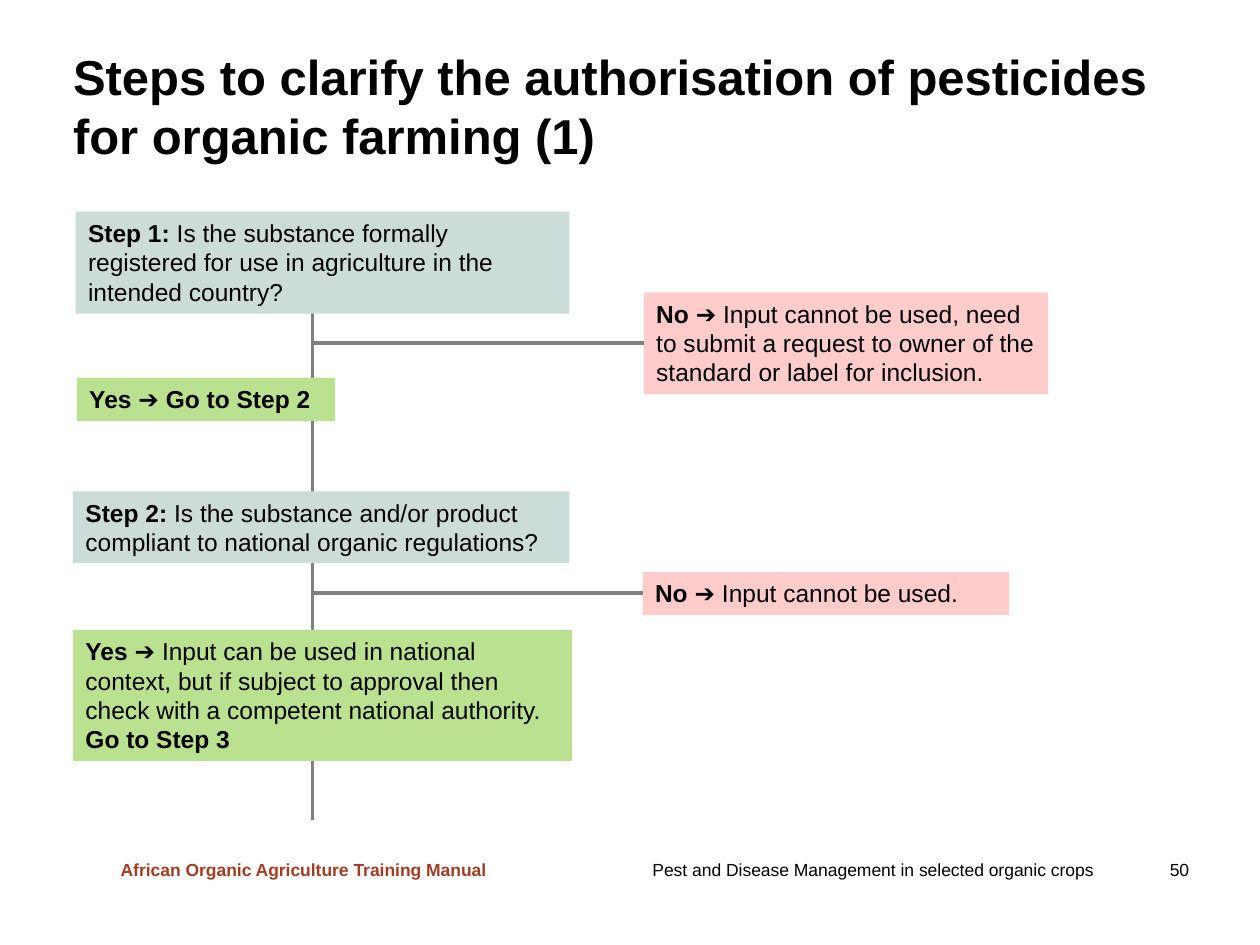
"""Build the slide on the first steps to clarify pesticide authorisation."""

from dataclasses import dataclass

from lxml import etree
from pptx import Presentation
from pptx.dml.color import RGBColor
from pptx.enum.shapes import MSO_CONNECTOR, MSO_SHAPE
from pptx.enum.text import MSO_ANCHOR, PP_ALIGN
from pptx.oxml.ns import qn
from pptx.util import Inches, Pt

STRAIGHT = MSO_CONNECTOR.STRAIGHT
RECTANGLE = MSO_SHAPE.RECTANGLE
TOP, MIDDLE = MSO_ANCHOR.TOP, MSO_ANCHOR.MIDDLE
LEFT = PP_ALIGN.LEFT
LEFT_SIDE = 1

COLUMNS, ROWS = 100, 75
SLIDE_WIDTH, SLIDE_HEIGHT = Inches(10), Inches(7.5)
FONT = "Arial"
COLOURS = {
    "text": "000000",
    "manual": "A23D25",
    "line": "808080",
    "step": "CCDCD9",
    "yes": "BAE18F",
    "no": "FFCCCC",
}
SPINE_COLUMN, SPINE_TOP, SPINE_BOTTOM = 24.8, 21.8, 65.1
DEFAULT_INSETS = (1, 0.5, 1, 0.5)


@dataclass(frozen=True)
class Area:
    """A rectangle in grid columns and rows."""

    column: float
    row: float
    columns: float
    rows: float


@dataclass(frozen=True)
class Card:
    """A filled box whose paragraphs are lists of (text, bold) spans."""

    kind: str
    area: Area
    paras: list


CARDS = [
    Card("no", Area(51.1, 23.2, 32.1, 8.1), [[
        ("No ", True),
        ("➔ Input cannot be used, need to submit a request to owner of the "
         "standard or label for inclusion.", False)]]),
    Card("yes", Area(6.1, 30, 20.5, 3.4), [[
        ("Yes ", True), ("➔ ", False), ("Go to Step 2", True)]]),
    Card("step", Area(5.8, 39, 39.4, 5.7), [[
        ("Step 2: ", True),
        ("Is the substance and/or product compliant to national organic "
         "regulations?", False)]]),
    Card("no", Area(51, 45.4, 29.1, 3.4), [[
        ("No ➔ ", True), ("Input cannot be used.", False)]]),
    Card("yes", Area(5.8, 50, 39.6, 10.4), [
        [("Yes ➔ ", True),
         ("Input can be used in national context, but if subject to approval "
          "then check with a competent national authority.", False)],
        [("Go to Step 3", True)]]),
    Card("step", Area(6, 16.8, 39.2, 8.1), [[
        ("Step 1: ", True),
        ("Is the substance formally registered for use in agriculture in the "
         "intended country?", False)]]),
]


def across(columns: float) -> int:
    """Turn grid columns into a length."""
    return round(SLIDE_WIDTH * columns / COLUMNS)


def down(rows: float) -> int:
    """Turn grid rows into a length."""
    return round(SLIDE_HEIGHT * rows / ROWS)


def place(area: Area) -> tuple:
    """Return left, top, width and height of an area."""
    return (across(area.column), down(area.row),
            across(area.columns), down(area.rows))


def write(box, paras: list, *, size: float, colour: str = "text",
          anchor=TOP, insets: tuple = DEFAULT_INSETS, wrap: bool = True,
          tab: float = 0) -> None:
    """Fill a box with paragraphs of (text, bold) spans."""
    frame = box.text_frame
    frame.word_wrap = wrap
    frame.vertical_anchor = anchor
    left, top, right, bottom = insets
    frame.margin_left, frame.margin_right = across(left), across(right)
    frame.margin_top, frame.margin_bottom = down(top), down(bottom)
    for index, spans in enumerate(paras):
        para = frame.add_paragraph() if index else frame.paragraphs[0]
        para.alignment = LEFT
        if tab:
            stops = etree.SubElement(para._p.get_or_add_pPr(), qn("a:tabLst"))
            etree.SubElement(stops, qn("a:tab"), pos=str(across(tab)), algn="r")
        for text, bold in spans:
            span = para.add_run()
            span.text = text
            span.font.name = FONT
            span.font.size = Pt(size)
            span.font.bold = bold
            span.font.color.rgb = RGBColor.from_string(COLOURS[colour])


def add_label(page, area: Area, text: str, *, bold: bool, **style) -> None:
    """Add a plain text box."""
    write(page.shapes.add_textbox(*place(area)), [[(text, bold)]], **style)


def add_card(page, card: Card):
    """Add a filled box with its text."""
    box = page.shapes.add_shape(RECTANGLE, *place(card.area))
    box.shadow.inherit = False
    box.fill.solid()
    box.fill.fore_color.rgb = RGBColor.from_string(COLOURS[card.kind])
    box.line.fill.background()
    write(box, card.paras, size=14)
    return box


def add_line(page, begin: tuple, end: tuple):
    """Add a straight grey line between two points."""
    line = page.shapes.add_connector(STRAIGHT, *begin, *end)
    line.line.color.rgb = RGBColor.from_string(COLOURS["line"])
    line.line.width = Pt(2.25)
    etree.SubElement(line._element.spPr, qn("a:effectLst"))
    return line


def add_branch(page, box) -> None:
    """Join the spine to the left side of a box."""
    middle = box.top + box.height // 2
    line = add_line(page, (across(SPINE_COLUMN), middle), (box.left, middle))
    line.end_connect(box, LEFT_SIDE)


def main() -> None:
    """Build and save the deck."""
    deck = Presentation()
    deck.slide_width, deck.slide_height = SLIDE_WIDTH, SLIDE_HEIGHT
    page = deck.slides.add_slide(deck.slide_layouts[6])

    add_label(page, Area(50.8, 67.7, 48.4, 2.7),
              "Pest and Disease Management in selected organic crops\t50",
              bold=False, size=10, anchor=MIDDLE, tab=42.6)
    add_label(page, Area(8.6, 67.7, 31.4, 2.7),
              "African Organic Agriculture Training Manual",
              bold=True, size=10, colour="manual", wrap=False)
    add_line(page, (across(SPINE_COLUMN), down(SPINE_TOP)),
             (across(SPINE_COLUMN), down(SPINE_BOTTOM)))
    add_label(page, Area(5.8, 2.5, 90.2, 12.2),
              "Steps to clarify the authorisation of pesticides for organic "
              "farming (1)",
              bold=True, size=28, anchor=MIDDLE, insets=(0, 0, 1, 0.5))

    boxes = [(card.kind, add_card(page, card)) for card in CARDS]
    for kind, box in boxes:
        if kind == "no":
            add_branch(page, box)

    deck.save("out.pptx")


if __name__ == "__main__":
    main()
